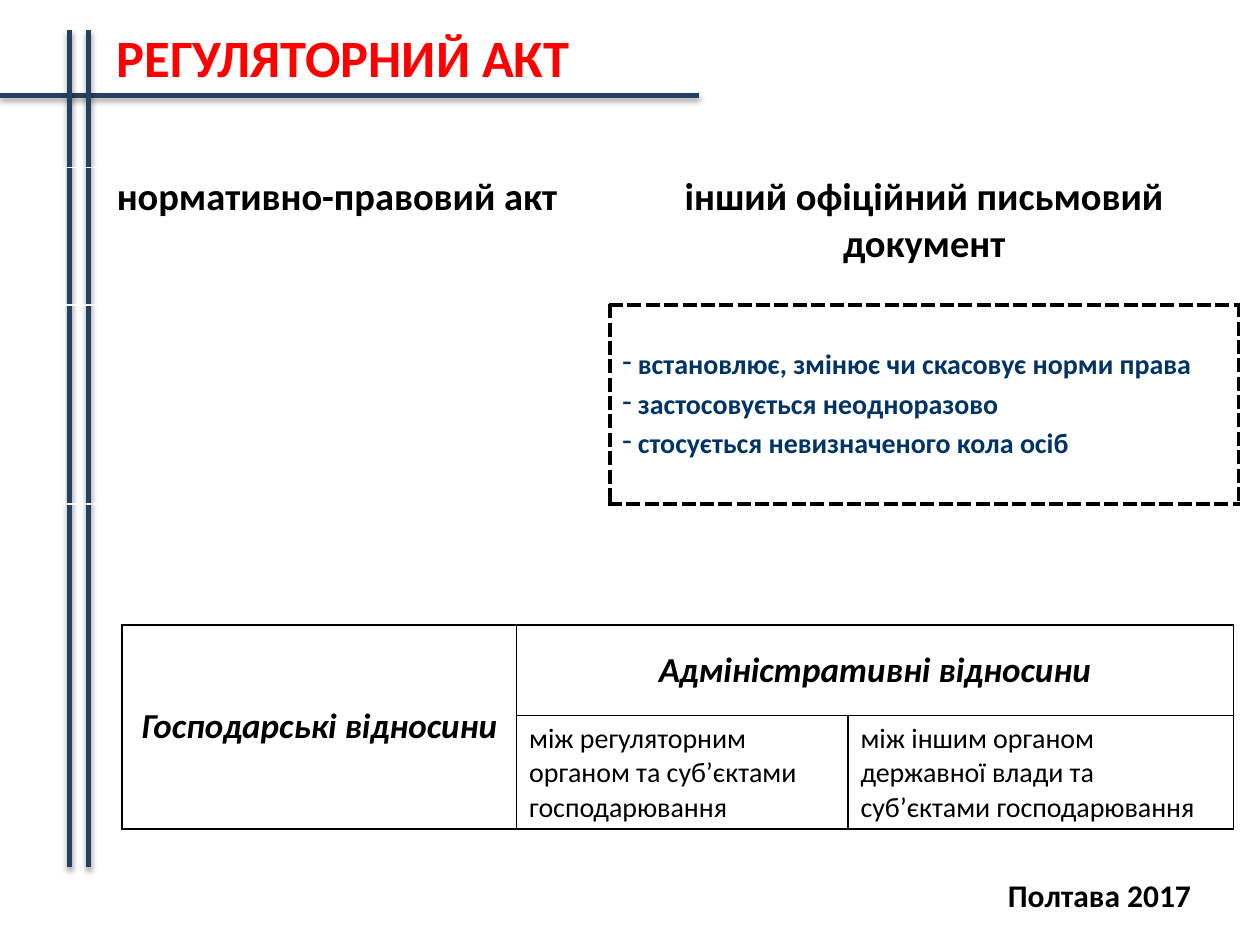
from dataclasses import dataclass

from lxml import etree
from pptx import Presentation
from pptx import util as u
from pptx.dml.color import RGBColor
from pptx.enum import shapes, text
from pptx.oxml import ns

PX_PER_INCH = 100
CENTER, LEFT = text.PP_ALIGN.CENTER, text.PP_ALIGN.LEFT
TOP, MIDDLE = text.MSO_ANCHOR.TOP, text.MSO_ANCHOR.MIDDLE


@dataclass(frozen=True)
class Theme:
    font: str = "Calibri"
    ink: str = "000000"
    accent: str = "FF0000"
    rule: str = "254061"
    note: str = "003366"
    paper: str = "FFFFFF"
    title_size: int = 30
    heading_size: int = 22
    relation_size: int = 20
    footer_size: int = 18
    body_size: int = 16


def px(length):
    return u.Emu(length * 914400 // PX_PER_INCH)


def add_xml(parent, tag, **attributes):
    return etree.SubElement(parent, ns.qn(tag), attributes)


class SlideBuilder:
    def __init__(self, deck, theme):
        self.theme = theme
        self.slide = deck.slides.add_slide(deck.slide_layouts[5])

    def add_lines(self, frame, lines, size, color, align=LEFT, spaced=False, bullet=None, **style):
        for index, line in enumerate(lines):
            para = frame.paragraphs[0] if index == 0 else frame.add_paragraph()
            para.alignment = align
            if spaced:
                para.space_before = u.Pt(size * 0.2)
            if bullet:
                add_xml(para._p.get_or_add_pPr(), "a:buChar", char=bullet)
            span = para.add_run()
            span.text = line
            values = {"name": self.theme.font, "size": u.Pt(size), "bold": True, **style}
            for name, value in values.items():
                setattr(span.font, name, value)
            span.font.color.rgb = RGBColor.from_string(color)

    def place(self, box, bounds, wrap):
        for name, value in zip(("left", "top", "width", "height"), bounds):
            setattr(box, name, px(value))
        values = {"word_wrap": wrap, "vertical_anchor": TOP,
                  "auto_size": text.MSO_AUTO_SIZE.SHAPE_TO_FIT_TEXT}
        for name, value in values.items():
            setattr(box.text_frame, name, value)

    def title(self, line, bounds):
        box = self.slide.shapes.title
        self.place(box, bounds, wrap=False)
        self.add_lines(box.text_frame, [line], self.theme.title_size, self.theme.accent, CENTER)

    def label(self, line, bounds):
        box = self.slide.shapes.add_textbox(*map(px, bounds))
        self.place(box, bounds, wrap=True)
        self.add_lines(box.text_frame, [line], self.theme.footer_size, self.theme.ink, CENTER)

    def rule(self, *ends):
        line = self.slide.shapes.add_connector(shapes.MSO_CONNECTOR.STRAIGHT, *map(px, ends))
        line.line.width = u.Pt(3)
        line.line.color.rgb = RGBColor.from_string(self.theme.rule)
        effects = add_xml(line._element.spPr, "a:effectLst")
        shadow = add_xml(effects, "a:outerShdw", blurRad=str(u.Pt(3.1)), dist=str(u.Pt(1.8)),
                         dir="5400000", rotWithShape="0")
        color = add_xml(shadow, "a:srgbClr", val=self.theme.ink)
        add_xml(color, "a:alpha", val="35000")

    def table(self, left, top, columns, rows):
        frame = self.slide.shapes.add_table(
            len(rows), len(columns), px(left), px(top), px(sum(columns)), px(sum(rows)))
        table = frame.table
        table.first_row = table.horz_banding = False
        for column, width in zip(table.columns, columns):
            column.width = px(width)
        for row, height in zip(table.rows, rows):
            row.height = px(height)
        for cell in table.iter_cells():
            cell.fill.background()
        return table

    def border(self, cell, sides, width, dash="solid"):
        properties = cell._tc.get_or_add_tcPr()
        for position, side in enumerate(sides):
            line = etree.Element(ns.qn(f"a:ln{side}"), w=str(u.Pt(width)))
            add_xml(add_xml(line, "a:solidFill"), "a:srgbClr", val=self.theme.ink)
            add_xml(line, "a:prstDash", val=dash)
            properties.insert(position, line)

    def fill_cell(self, cell, lines, size, color=None, anchor=MIDDLE, **style):
        cell.vertical_anchor = anchor
        self.add_lines(cell.text_frame, lines, size, color or self.theme.ink, spaced=True, **style)


def add_act_table(builder):
    theme = builder.theme
    acts = builder.table(51, 133, [433, 499], [109, 158])
    headings = ["нормативно-правовий акт", "інший офіційний письмовий документ"]
    for column, heading in enumerate(headings):
        builder.fill_cell(acts.cell(0, column), [heading], theme.heading_size,
                          anchor=TOP, align=CENTER)
    features = acts.cell(1, 1)
    builder.fill_cell(features, [
        " встановлює, змінює чи скасовує норми права",
        " застосовується неодноразово",
        " стосується невизначеного кола осіб",
    ], theme.body_size, theme.note, bullet="-")
    features.fill.solid()
    features.fill.fore_color.rgb = RGBColor.from_string(theme.paper)
    for cell, sides in ((acts.cell(0, 1), "B"), (acts.cell(1, 0), "R"), (features, "LRTB")):
        builder.border(cell, sides, 2.25, "sysDash")


def add_relation_table(builder):
    theme = builder.theme
    relations = builder.table(97, 496, [313, 263, 306], [72, 90])
    for cell in relations.iter_cells():
        builder.border(cell, "LRTB", 1)
    relations.cell(0, 0).merge(relations.cell(1, 0))
    relations.cell(0, 1).merge(relations.cell(0, 2))
    for column, heading in enumerate(["Господарські відносини", "Адміністративні відносини"]):
        builder.fill_cell(relations.cell(0, column), [heading], theme.relation_size,
                          align=CENTER, italic=True)
    parties = ["між регуляторним органом та суб’єктами господарювання",
               "між іншим органом державної влади та суб’єктами господарювання"]
    for column, party in enumerate(parties, 1):
        builder.fill_cell(relations.cell(1, column), [party], theme.body_size, bold=False)


def main():
    deck = Presentation()
    deck.slide_width, deck.slide_height = px(1000), px(750)
    builder = SlideBuilder(deck, Theme())
    builder.rule(0, 76, 555, 76)
    for x in (55, 70):
        builder.rule(x, 24, x, 688)
    builder.label("Полтава 2017 ", (769, 690, 213, 40))
    add_act_table(builder)
    add_relation_table(builder)
    builder.title("РЕГУЛЯТОРНИЙ АКТ ", (81, 15, 392, 61))
    deck.save("out.pptx")


if __name__ == "__main__":
    main()
